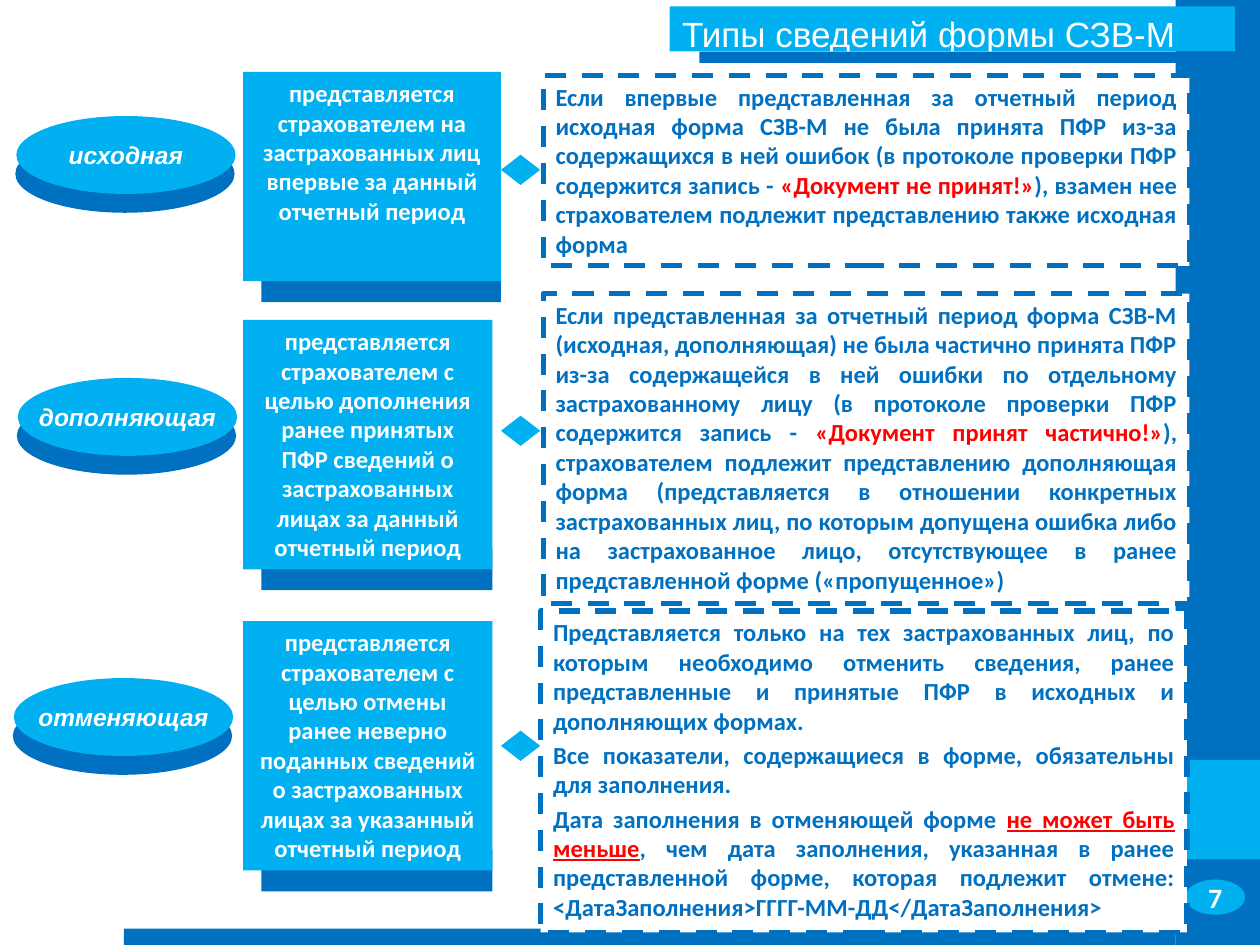
from pptx import Presentation
from pptx.dml.color import RGBColor
from pptx.enum.dml import MSO_LINE
from pptx.enum.shapes import MSO_SHAPE
from pptx.enum.text import MSO_ANCHOR, MSO_AUTO_SIZE, PP_ALIGN
from pptx.util import Cm, Pt

# Content: a paragraph is a list of (text, style) runs
TITLE = "Типы сведений формы СЗВ-М"
PAGE = "7"
ROWS = [
    {
        "name": "исходная",
        "about": "представляется страхователем на застрахованных лиц впервые "
                 "за данный отчетный период",
        "note": [[
            ("Если впервые представленная за отчетный период исходная форма "
             "СЗВ-М не была принята ПФР из-за содержащихся в ней ошибок "
             "(в протоколе проверки ПФР содержится запись - ", "note"),
            ("«Документ не принят!»", "alert"),
            ("), взамен нее страхователем подлежит представлению также "
             "исходная форма", "note"),
        ]],
        "oval": (0.33, 2.34), "panel": (1.45, 5.2, 4.22), "gap": 2.8,
        "gem": 3.12, "box": (10.95, 1.52, 13.03, 3.84),
    },
    {
        "name": "дополняющая",
        "about": "представляется страхователем с целью дополнения ранее "
                 "принятых ПФР сведений о застрахованных лицах за данный "
                 "отчетный период",
        "note": [[
            ("Если представленная за отчетный период форма СЗВ-М (исходная, "
             "дополняющая) не была частично принята ПФР из-за содержащейся "
             "в ней ошибки по отдельному застрахованному лицу (в протоколе "
             "проверки ПФР содержится запись - ", "note"),
            ("«Документ принят частично!»", "alert"),
            ("), страхователем подлежит представлению дополняющая форма "
             "(представляется в отношении конкретных застрахованных лиц, по "
             "которым допущена ошибка либо на застрахованное лицо, "
             "отсутствующее в ранее представленной форме («пропущенное»)",
             "note"),
        ]],
        "oval": (0.36, 7.62), "panel": (6.45, 5.03, 5.03), "gap": 0,
        "gem": 8.38, "box": (10.95, 5.92, 13.03, 6.25),
    },
    {
        "name": "отменяющая",
        "about": "представляется страхователем с целью отмены ранее неверно "
                 "поданных сведений о застрахованных лицах за указанный "
                 "отчетный период",
        "note": [
            [("Представляется только на тех застрахованных лиц, по которым "
              "необходимо отменить сведения, ранее представленные и принятые "
              "ПФР в исходных и дополняющих формах.", "note")],
            [("Все показатели, содержащиеся в форме, обязательны для "
              "заполнения.", "note")],
            [("Дата заполнения в отменяющей форме ", "note"),
             ("не может быть меньше", "under"),
             (", чем дата заполнения, указанная в ранее представленной форме, "
              "которая подлежит отмене: "
              "<ДатаЗаполнения>ГГГГ-ММ-ДД</ДатаЗаполнения>", "note")],
        ],
        "oval": (0.28, 13.67), "panel": (12.52, 5.03, 5.03), "gap": 0,
        "gem": 14.73, "box": (10.9, 12.32, 13.03, 6.48),
    },
]

# Theme: colours and type styles
DARK, LIGHT, WHITE, RED = (
    RGBColor.from_string(c) for c in ("0070C0", "00B0F0", "FFFFFF", "FF0000"))
BODY = {"name": "Calibri", "size": Pt(14), "bold": True}
THEME = {
    "title": (WHITE, {"name": "Arial", "size": Pt(20)}),
    "page": (WHITE, BODY | {"size": Pt(16)}),
    "name": (WHITE, BODY | {"name": "Arial", "italic": True}),
    "about": (WHITE, BODY),
    "note": (DARK, BODY),
    "alert": (RED, BODY),
    "under": (RED, BODY | {"underline": True}),
}
RECT, OVAL, GEM = MSO_SHAPE.RECTANGLE, MSO_SHAPE.OVAL, MSO_SHAPE.DIAMOND

# Shared measures, in cm
WIDE, HIGH = 25.4, 19.05
SIDE = 23.7
OVAL_W, OVAL_H, OVAL_DROP = 4.42, 1.57, 0.38
PANEL_X, PANEL_IN, PANEL_DROP = 4.9, 0.37, 0.42
GEM_X, GEM_W, GEM_H = 10.1, 0.79, 0.61


def draw(slide, kind, x, y, w, h, fill):
    shape = slide.shapes.add_shape(kind, Cm(x), Cm(y), Cm(w), Cm(h))
    shape.shadow.inherit = False
    shape.fill.solid()
    shape.fill.fore_color.rgb = fill
    shape.line.fill.background()
    return shape


def write(shape, paras, align, gap=0, **frame):
    text = shape.text_frame
    for key, val in ({"word_wrap": True, "vertical_anchor": MSO_ANCHOR.TOP}
                     | frame).items():
        setattr(text, key, val)
    for i, runs in enumerate(paras):
        para = text.add_paragraph() if i else text.paragraphs[0]
        para.alignment = align
        para.space_before = Pt(gap)
        for words, style in runs:
            run = para.add_run()
            run.text = words
            color, font = THEME[style]
            run.font.color.rgb = color
            for key, val in font.items():
                setattr(run.font, key, val)


def add_row(slide, row):
    # Description panel over its dark ledge
    top, w, h = row["panel"]
    draw(slide, RECT, PANEL_X + PANEL_IN, top + h - PANEL_DROP,
         w - PANEL_IN, 2 * PANEL_DROP, DARK)
    panel = draw(slide, RECT, PANEL_X, top, w, h, LIGHT)
    write(panel, [[(row["about"], "about")]], PP_ALIGN.CENTER, row["gap"])

    # Type name on a two-layer oval
    x, y = row["oval"]
    draw(slide, OVAL, x - 0.02, y + OVAL_DROP, OVAL_W, OVAL_H, DARK)
    oval = draw(slide, OVAL, x, y, OVAL_W, OVAL_H, LIGHT)
    write(oval, [[(row["name"], "name")]], PP_ALIGN.CENTER,
          word_wrap=False, vertical_anchor=MSO_ANCHOR.MIDDLE)

    # Diamond and dashed note
    draw(slide, GEM, GEM_X, row["gem"], GEM_W, GEM_H, LIGHT)
    box = draw(slide, RECT, *row["box"], WHITE)
    box.line.color.rgb = DARK
    box.line.width = Pt(3)
    box.line.dash_style = MSO_LINE.DASH
    write(box, row["note"], PP_ALIGN.JUSTIFY, 2.8,
          auto_size=MSO_AUTO_SIZE.SHAPE_TO_FIT_TEXT)


def main():
    deck = Presentation()
    deck.slide_width, deck.slide_height = Cm(WIDE), Cm(HIGH)
    slide = deck.slides.add_slide(deck.slide_layouts[6])

    # Side band, page number and bottom band
    draw(slide, RECT, SIDE, 0, WIDE - SIDE, HIGH, DARK)
    draw(slide, RECT, SIDE, 15.32, WIDE - SIDE, 2, LIGHT)
    page = draw(slide, OVAL, 23.9, 17.73, 1.2, 0.71, LIGHT)
    write(page, [[(PAGE, "page")]], PP_ALIGN.CENTER,
          vertical_anchor=MSO_ANCHOR.MIDDLE)
    draw(slide, RECT, 2.5, 18.72, SIDE - 2.5, 0.33, DARK)

    # Title
    head = draw(slide, RECT, 13.5, 0.13, 11.4, 0.91, LIGHT)
    write(head, [[(TITLE, "title")]], PP_ALIGN.LEFT)
    draw(slide, RECT, 14.1, 1.04, 10.8, 0.23, DARK)

    for row in ROWS:
        add_row(slide, row)
    deck.save("out.pptx")


if __name__ == "__main__":
    main()
